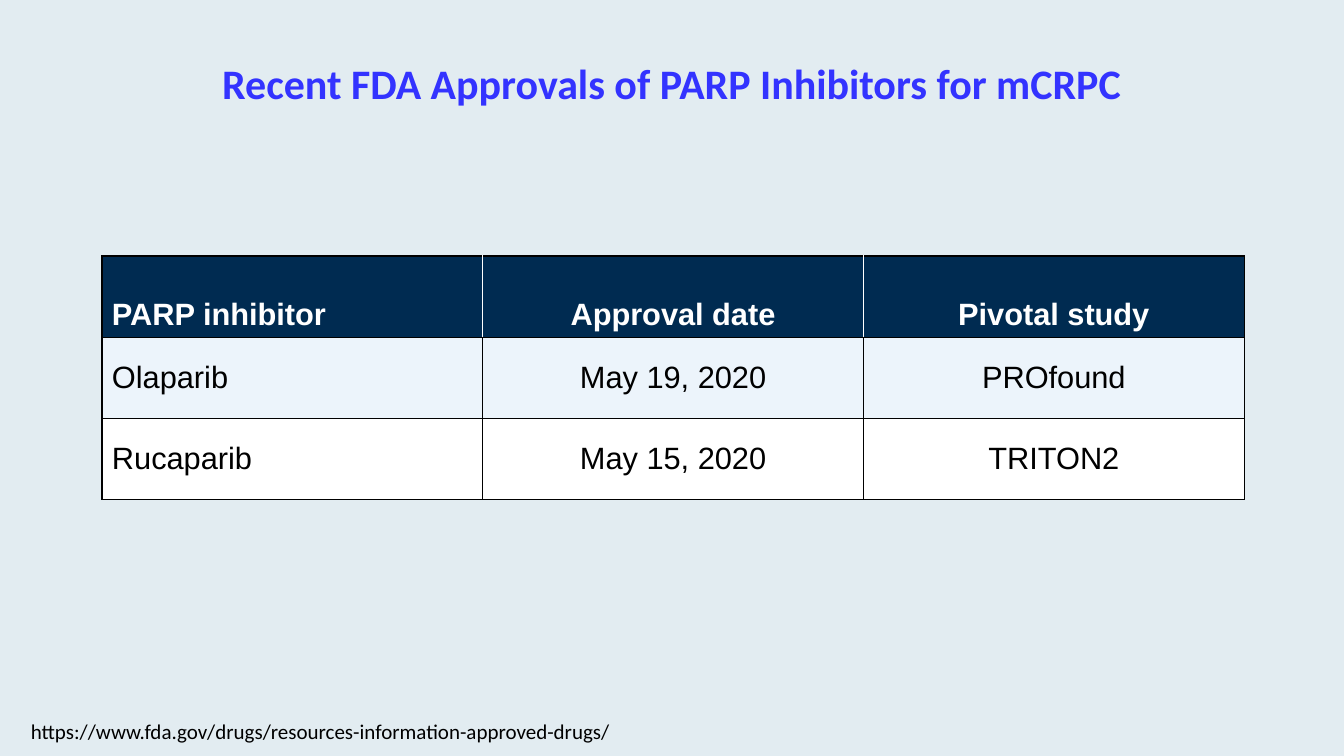
from lxml.etree import SubElement
from pptx import Presentation
from pptx.dml.color import RGBColor
from pptx.enum.text import MSO_ANCHOR, MSO_AUTO_SIZE, PP_ALIGN
from pptx.oxml.ns import qn
from pptx.util import Pt

COLORS = {
    "background": "E2ECF1",
    "title": "3333FF",
    "header": "002B51",
    "band": "ECF4FB",
    "white": "FFFFFF",
    "black": "000000",
}
APPROVALS = [
    ["PARP inhibitor", "Approval date", "Pivotal study"],
    ["Olaparib", "May 19, 2020", "PROfound"],
    ["Rucaparib", "May 15, 2020", "TRITON2"],
]
ROW_FILLS = ["header", "band", "white"]


def format_text(paragraph, font_name, size, color, bold=False):
    for run in paragraph.runs:
        run.font.name = font_name
        run.font.size = Pt(size)
        run.font.bold = bold
        run.font.color.rgb = RGBColor.from_string(COLORS[color])


def add_border(cell, side, color):
    line = SubElement(cell._tc.get_or_add_tcPr(), qn(f"a:ln{side}"), w=str(Pt(1)))
    fill = SubElement(line, qn("a:solidFill"))
    SubElement(fill, qn("a:srgbClr"), val=COLORS[color])


presentation = Presentation()
presentation.slide_width = Pt(960)
presentation.slide_height = Pt(540)
slide = presentation.slides.add_slide(presentation.slide_layouts[5])
slide.background.fill.solid()
slide.background.fill.fore_color.rgb = RGBColor.from_string(COLORS["background"])

title = slide.shapes.title
title.left, title.top, title.width, title.height = Pt(72), Pt(16.5), Pt(816), Pt(90)
heading = title.text_frame
heading.text = "Recent FDA Approvals of PARP Inhibitors for mCRPC"
heading.auto_size = MSO_AUTO_SIZE.NONE
heading.vertical_anchor = MSO_ANCHOR.MIDDLE
heading.margin_left = heading.margin_right = heading.margin_top = heading.margin_bottom = 0
heading.paragraphs[0].alignment = PP_ALIGN.CENTER
heading.paragraphs[0].line_spacing = 0.88
format_text(heading.paragraphs[0], "Calibri", 30, "title", True)

approvals = slide.shapes.add_table(3, 3, Pt(72.8), Pt(182.8), Pt(816), Pt(174)).table
for column in approvals.columns:
    column.width = Pt(272)
for row in approvals.rows:
    row.height = Pt(58)

for row_index, entries in enumerate(APPROVALS):
    is_header = row_index == 0
    for column_index, entry in enumerate(entries):
        cell = approvals.cell(row_index, column_index)
        cell.text = entry
        cell.vertical_anchor = MSO_ANCHOR.BOTTOM if is_header else MSO_ANCHOR.MIDDLE
        paragraph = cell.text_frame.paragraphs[0]
        paragraph.alignment = PP_ALIGN.CENTER if column_index else PP_ALIGN.LEFT
        format_text(paragraph, "Arial", 22, "white" if is_header else "black", is_header)
        add_border(cell, "L", "white" if is_header and column_index > 0 else "black")
        add_border(cell, "R", "white" if is_header and column_index < 2 else "black")
        add_border(cell, "T", "black")
        add_border(cell, "B", "black")
        cell.fill.solid()
        cell.fill.fore_color.rgb = RGBColor.from_string(COLORS[ROW_FILLS[row_index]])

source = slide.shapes.add_textbox(Pt(15), Pt(510), Pt(432), Pt(25)).text_frame
source.word_wrap = False
source.auto_size = MSO_AUTO_SIZE.SHAPE_TO_FIT_TEXT
source.text = "https://www.fda.gov/drugs/resources-information-approved-drugs/"
format_text(source.paragraphs[0], "Calibri", 15, "black")

presentation.save("out.pptx")
